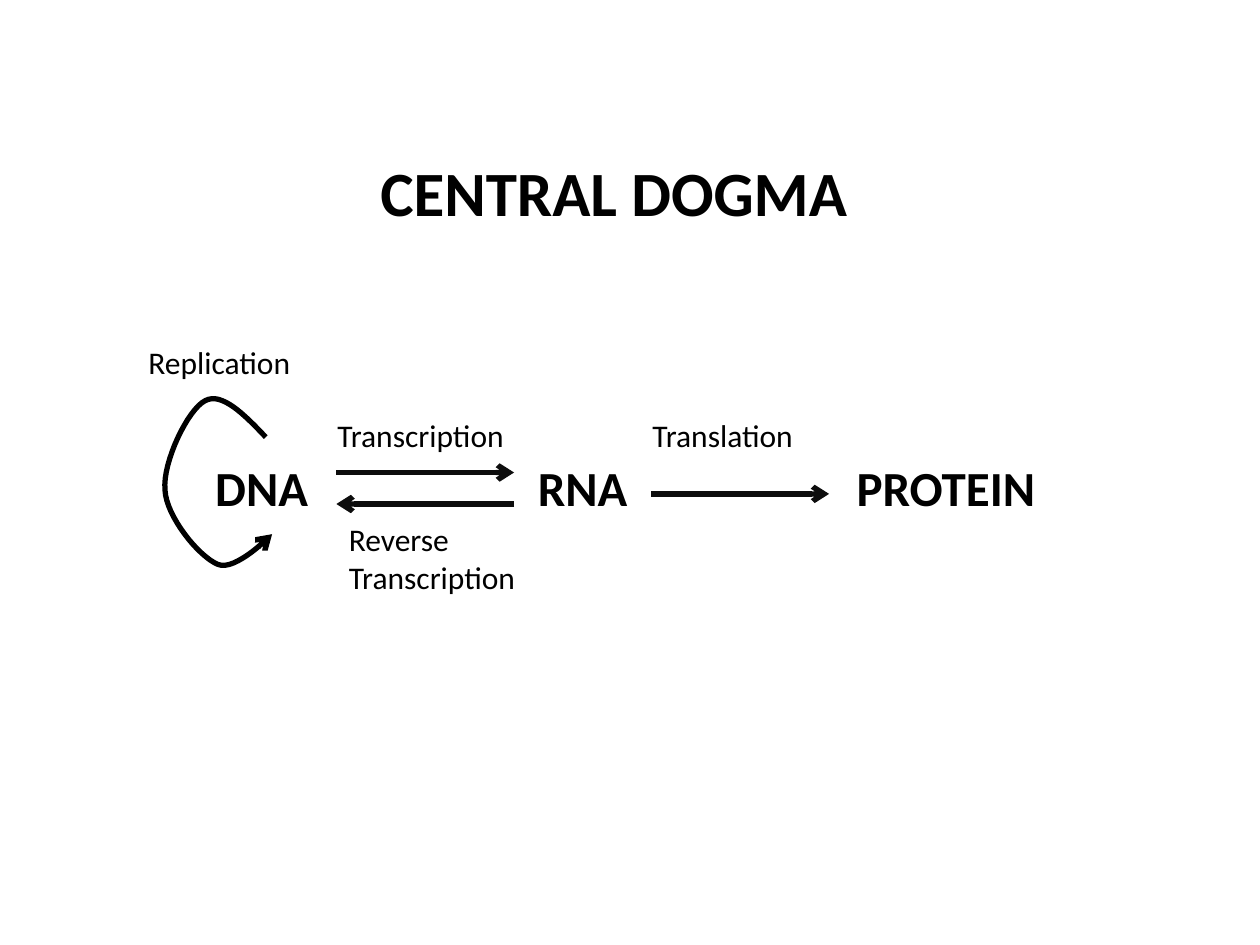
from typing import NamedTuple

from lxml.etree import SubElement
from pptx import Presentation
from pptx.dml.color import RGBColor
from pptx.enum.shapes import MSO_CONNECTOR as Connector
from pptx.enum.text import MSO_AUTO_SIZE as AutoSize
from pptx.oxml.ns import qn
from pptx.util import Inches, Pt

Point = tuple[float, float]

FORMATS = {
    "title": {"size": Pt(36), "bold": True},
    "molecule": {"size": Pt(28), "bold": True},
    "process": {"size": Pt(18), "bold": False},
}
BLACK = "000000"
ARROW_COLOR = "0D0D0D"
ARROW_LENGTH = 1.41
CURVE_STEPS = 16


class Label(NamedTuple):
    text: str
    style: str
    left: float
    top: float
    width: float
    height: float


class Arrow(NamedTuple):
    start: float
    end: float
    height: float


class Curve(NamedTuple):
    first_control: Point
    second_control: Point
    end: Point


LABELS = [
    Label("DNA", "molecule", 1.61, 3.58, 0.95, 0.57),
    Label("RNA", "molecule", 4.17, 3.58, 0.92, 0.57),
    Label("PROTEIN", "molecule", 6.7, 3.58, 1.63, 0.57),
    Label("Transcription", "process", 2.58, 3.25, 1.54, 0.4),
    Label("Translation", "process", 5.08, 3.25, 1.33, 0.4),
    Label("Reverse\nTranscription", "process", 2.67, 4.08, 1.54, 0.71),
    Label("Replication", "process", 1.08, 2.67, 1.34, 0.4),
    Label("CENTRAL DOGMA", "title", 2.92, 1.17, 3.95, 0.71),
]
ARROWS = [
    Arrow(2.67, 2.67 + ARROW_LENGTH, 3.75),
    Arrow(2.67 + ARROW_LENGTH, 2.67, 4),
    Arrow(5.17, 5.17 + ARROW_LENGTH, 3.92),
]
LOOP_START = (2.11, 3.47)
LOOP = [
    Curve((1.94, 3.29), (1.76, 3.11), (1.63, 3.18)),
    Curve((1.49, 3.25), (1.29, 3.67), (1.31, 3.89)),
    Curve((1.32, 4.1), (1.58, 4.42), (1.73, 4.48)),
    Curve((1.87, 4.54), (2.16, 4.24), (2.16, 4.24)),
]


def color(value: str) -> RGBColor:
    return RGBColor.from_string(value)


def add_label(page, label: Label) -> None:
    place = (Inches(value) for value in label[2:])
    frame = page.shapes.add_textbox(*place).text_frame
    frame.word_wrap = False
    frame.auto_size = AutoSize.SHAPE_TO_FIT_TEXT
    frame.text = label.text
    for para in frame.paragraphs:
        for span in para.runs:
            span.font.name = "Calibri"
            span.font.color.rgb = color(BLACK)
            for name, value in FORMATS[label.style].items():
                setattr(span.font, name, value)


def style_arrow(shape, value: str) -> None:
    shape.line.color.rgb = color(value)
    shape.line.width = Pt(3)
    outline = shape.line._get_or_add_ln()
    SubElement(outline, qn("a:tailEnd"), type="arrow")


def add_arrow(page, arrow: Arrow) -> None:
    height = Inches(arrow.height)
    line = page.shapes.add_connector(
        Connector.STRAIGHT, Inches(arrow.start), height, Inches(arrow.end), height
    )
    style_arrow(line, ARROW_COLOR)
    SubElement(line._element.spPr, qn("a:effectLst"))


def curve_points(start: Point, curve: Curve) -> list[Point]:
    points = []
    for step in range(1, CURVE_STEPS + 1):
        t = step / CURVE_STEPS
        weights = ((1 - t) ** 3, 3 * t * (1 - t) ** 2, 3 * t**2 * (1 - t), t**3)
        x, y = (
            sum(weight * value for weight, value in zip(weights, axis))
            for axis in zip(start, *curve)
        )
        points.append((Inches(x), Inches(y)))
    return points


def add_loop(page, start: Point, curves: list[Curve]) -> None:
    builder = page.shapes.build_freeform(Inches(start[0]), Inches(start[1]))
    for curve in curves:
        builder.add_line_segments(curve_points(start, curve), close=False)
        start = curve.end
    loop = builder.convert_to_shape()
    loop.shadow.inherit = False
    loop.fill.background()
    style_arrow(loop, BLACK)


def main() -> None:
    deck = Presentation()
    deck.slide_width, deck.slide_height = Inches(10), Inches(7.5)
    page = deck.slides.add_slide(deck.slide_layouts[6])
    for arrow in ARROWS:
        add_arrow(page, arrow)
    add_loop(page, LOOP_START, LOOP)
    for label in LABELS:
        add_label(page, label)
    deck.save("out.pptx")


if __name__ == "__main__":
    main()
